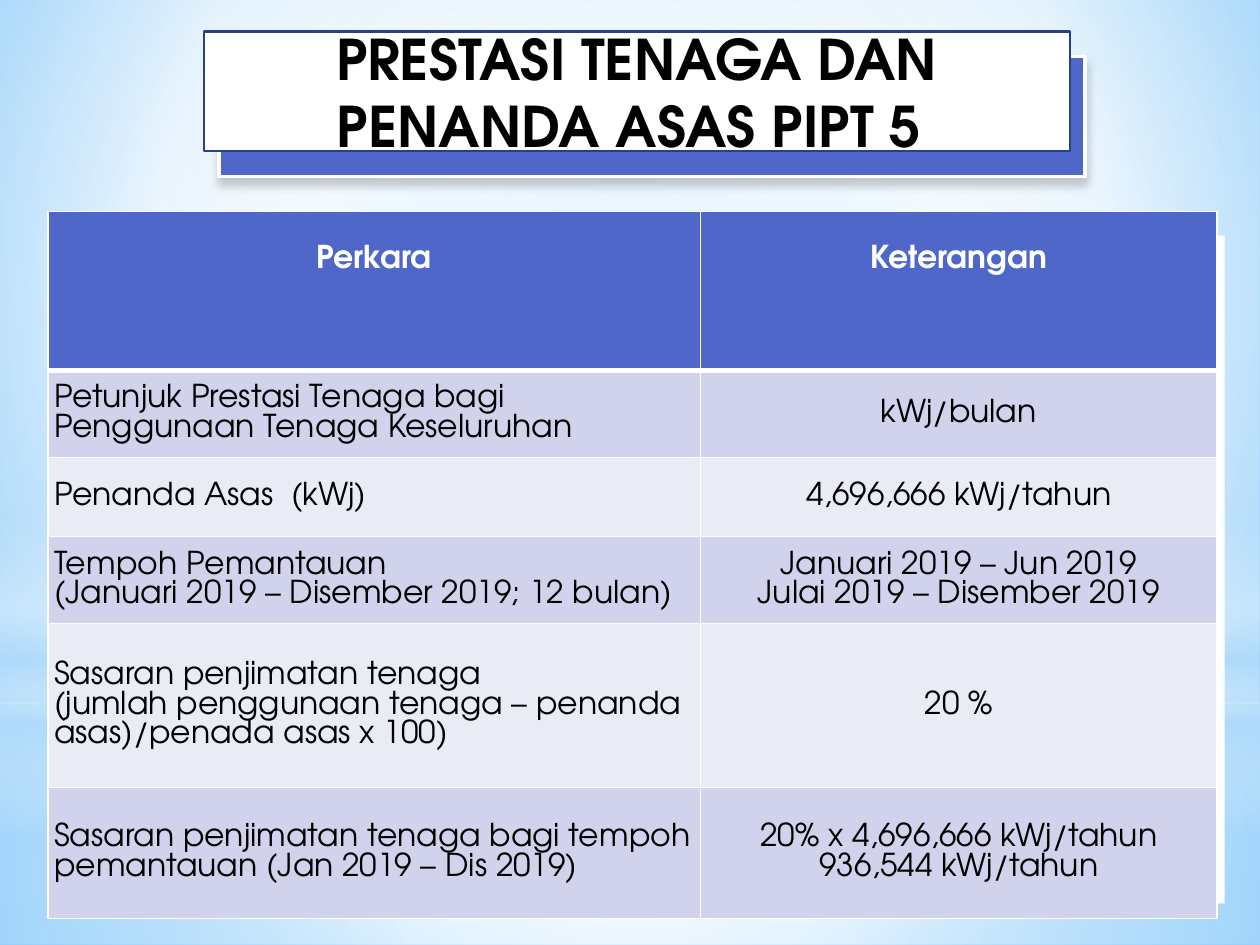
import lxml.etree
import pptx
import pptx.dml.color
import pptx.enum.shapes
import pptx.enum.text
import pptx.oxml
import pptx.util

Inches = pptx.util.Inches
Pt = pptx.util.Pt
Kind = pptx.enum.shapes.MSO_SHAPE
Anchor = pptx.enum.text.MSO_ANCHOR
Align = pptx.enum.text.PP_ALIGN
NAMESPACE = 'xmlns:a="http://schemas.openxmlformats.org/drawingml/2006/main"'
FONT = "TeX Gyre Adventor"
BLUE, WHITE, BLACK = "4E67C8", "FFFFFF", "000000"
color = pptx.dml.color.RGBColor.from_string


def gradient(stops, focus=None):
    marks = "".join(
        f'<a:gs pos="{place * 1000}"><a:srgbClr val="{tint}">'
        f'<a:alpha val="{opacity * 1000}"/></a:srgbClr></a:gs>'
        for place, tint, opacity in stops
    )
    if focus:
        sides = " ".join(f'{side}="{value * 1000}"' for side, value in zip("ltrb", focus))
        course = f'<a:path path="circle"><a:fillToRect {sides}/></a:path>'
    else:
        course = '<a:lin ang="5400000" scaled="0"/>'
    return pptx.oxml.parse_xml(
        f'<a:gradFill {NAMESPACE} rotWithShape="1"><a:gsLst>{marks}</a:gsLst>{course}</a:gradFill>'
    )


def add_panel(shapes, kind, place, fill=None, line=None, width=1):
    panel = shapes.add_shape(kind, *[Inches(value) for value in place])
    panel.shadow.inherit = False
    panel.fill.solid()
    panel.fill.fore_color.rgb = color(fill or WHITE)
    if line:
        panel.line.color.rgb = color(line)
        panel.line.width = Pt(width)
    else:
        panel.line.fill.background()
    return panel


deck = pptx.Presentation()
deck.slide_width, deck.slide_height = Inches(10), Inches(7.5)
page = deck.slides.add_slide(deck.slide_layouts[6])

page.background.fill.solid()
plain = page.element.xpath(".//p:bgPr/a:solidFill")[0]
plain.getparent().replace(
    plain, gradient([(0, "9ED5FF", 100), (60, WHITE, 100), (100, "5BB9FF", 100)], (20, 10, 20, 60))
)

center = (50, 50, 50, 50)
glows = [
    (Kind.RECTANGLE, (0, 5.58, 10, 1.92),
     [(0, WHITE, 91), (37, WHITE, 76), (100, "B4DCFA", 79)], center),
    (Kind.RECTANGLE, (0, 0, 10, 5.58),
     [(0, WHITE, 89), (48, WHITE, 62), (100, "B4DCFA", 79)], center),
    (Kind.RECTANGLE, (0, 4.12, 10, 2.5),
     [(0, WHITE, 0), (29, WHITE, 30), (45, "B4DCFA", 40),
      (55, WHITE, 26), (65, "B4DCFA", 60), (100, WHITE, 0)], None),
    (Kind.OVAL, (0, 1.75, 10, 5.58), [(0, WHITE, 100), (56, WHITE, 0)], center),
]
for kind, place, stops, focus in glows:
    glow = add_panel(page.shapes, kind, place)
    plain = glow.element.xpath("./p:spPr/a:solidFill")[0]
    plain.getparent().replace(plain, gradient(stops, focus))

add_panel(page.shapes, Kind.RECTANGLE, (1.1, 1.87, 8.62, 5.3))

banner = page.shapes.add_group_shape()
backing = add_panel(banner.shapes, Kind.RECTANGLE, (1.74, 0.45, 6.87, 0.95), BLUE, WHITE, 2)
effects = backing.element.xpath("./p:spPr/a:effectLst")[0]
effects.append(pptx.oxml.parse_xml(
    f'<a:outerShdw {NAMESPACE} blurRad="{Pt(5)}" dist="{Pt(4)}" dir="5400000" rotWithShape="0">'
    f'<a:srgbClr val="{BLACK}"><a:alpha val="20000"/></a:srgbClr></a:outerShdw>'
))
title = add_panel(banner.shapes, Kind.RECTANGLE, (1.62, 0.25, 6.87, 0.95), WHITE, "2A3E8E", 1.25)
title.text_frame.word_wrap = True
title.text_frame.vertical_anchor = Anchor.MIDDLE
para = title.text_frame.paragraphs[0]
para.text = "PRESTASI TENAGA DAN PENANDA ASAS PIPT 5 "
para.alignment = Align.CENTER
para.font.name, para.font.size, para.font.bold = FONT, Pt(32), True
para.font.color.rgb = color(BLACK)

rows = [
    (1.26, "Perkara", "Keterangan"),
    (0.69, "Petunjuk Prestasi Tenaga bagi Penggunaan Tenaga Keseluruhan", "kWj/bulan"),
    (0.63, "Penanda Asas  (kWj)", "4,696,666 kWj/tahun"),
    (0.69, "Tempoh Pemantauan\n(Januari 2019 – Disember 2019; 12 bulan)",
     "Januari 2019 – Jun 2019\nJulai 2019 – Disember 2019"),
    (1.3, "Sasaran penjimatan tenaga\n(jumlah penggunaan tenaga – penanda asas)/penada asas x 100)",
     "20 %"),
    (1.04, "Sasaran penjimatan tenaga bagi tempoh pemantauan (Jan 2019 – Dis 2019)",
     "20% x 4,696,666 kWj/tahun\n936,544 kWj/tahun"),
]
table = page.shapes.add_table(
    len(rows), 2, Inches(0.38), Inches(1.68), Inches(9.28), Inches(5.61)
).table
table.horz_banding = False
table.columns[0].width, table.columns[1].width = Inches(5.18), Inches(4.1)

for row, (height, *texts) in enumerate(rows):
    table.rows[row].height = Inches(height)
    header = row == 0
    for column, text in enumerate(texts):
        cell = table.cell(row, column)
        cell.text = text
        cell.vertical_anchor = Anchor.TOP if header else Anchor.MIDDLE
        cell.margin_left = cell.margin_right = Inches(0.05)
        cell.margin_top = Inches(0.27 if header else 0)
        cell.margin_bottom = Inches(0)
        cell.fill.solid()
        cell.fill.fore_color.rgb = color(BLUE if header else ("E9EBF5", "D0D3EB")[row % 2])
        for para in cell.text_frame.paragraphs:
            para.alignment = Align.CENTER if header or column else Align.LEFT
            para.font.name, para.font.size, para.font.bold = FONT, Pt(18), header
            para.font.color.rgb = color(WHITE if header else BLACK)
        properties = cell._tc.get_or_add_tcPr()
        for order, side in enumerate("LRTB"):
            thick = (side == "B" and row == 0) or (side == "T" and row == 1)
            properties.insert(order, pptx.oxml.parse_xml(
                f'<a:ln{side} {NAMESPACE} w="{Pt(3 if thick else 1)}">'
                f'<a:solidFill><a:srgbClr val="{WHITE}"/></a:solidFill></a:ln{side}>'
            ))

deck.save("out.pptx")
